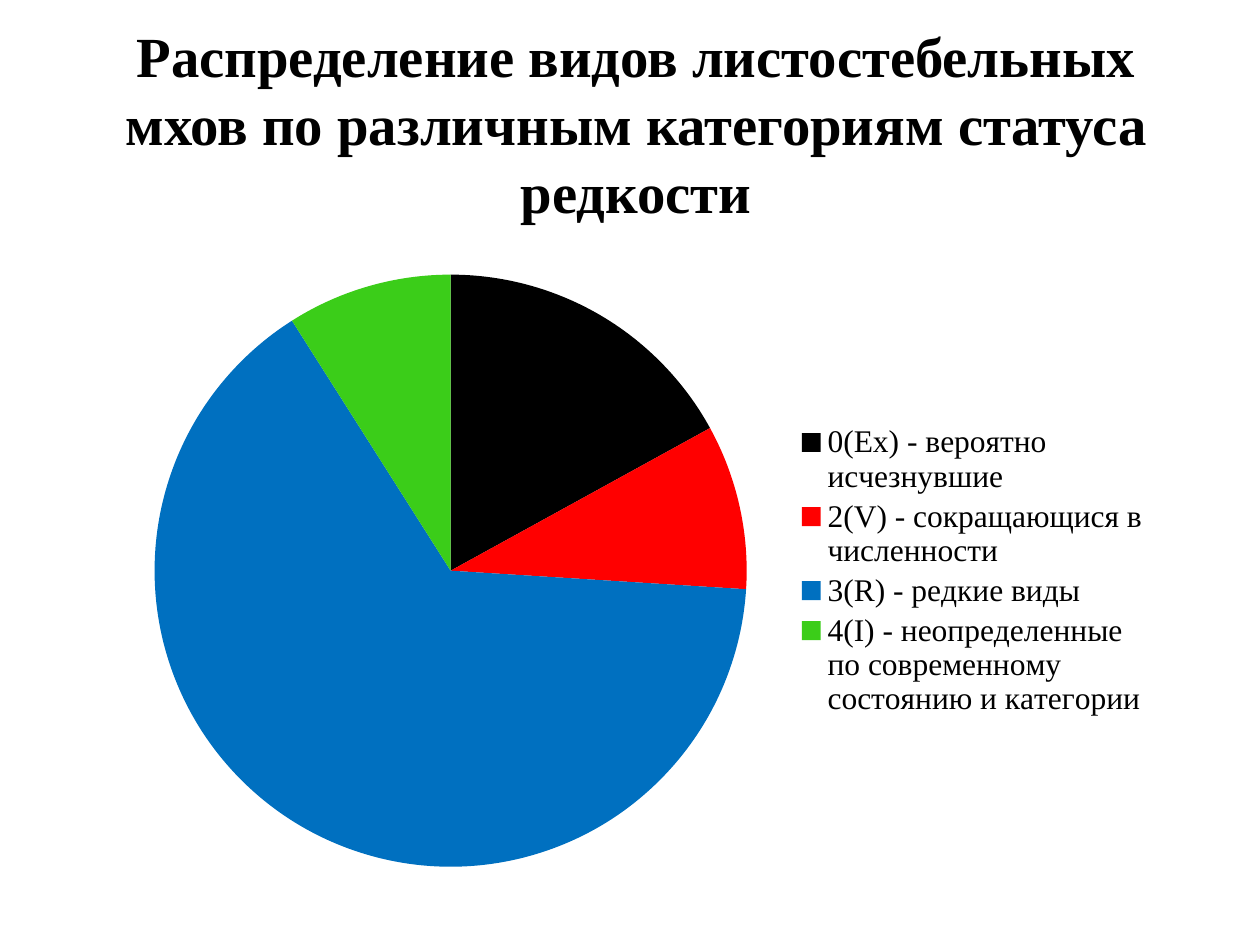
from lxml.etree import SubElement
from pptx import Presentation
from pptx.chart.data import CategoryChartData
from pptx.dml.color import RGBColor
from pptx.enum.chart import XL_CHART_TYPE, XL_LEGEND_POSITION
from pptx.enum.text import MSO_ANCHOR, MSO_AUTO_SIZE, PP_ALIGN
from pptx.oxml.ns import qn
from pptx.util import Pt

FONT = "Times New Roman"
TITLE = "Распределение видов листостебельных мхов по различным категориям статуса редкости"
CATEGORIES = [
    ("0(Ех) - вероятно исчезнувшие", 17, "000000"),
    ("2(V) - сокращающися в численности", 9, "FF0000"),
    ("3(R) - редкие виды", 65, "0070C0"),
    ("4(I) - неопределенные по современному состоянию и категории", 9, "3BCD19"),
]


def rgb(value):
    return RGBColor.from_string(value)


def set_all(obj, values):
    for name, value in values.items():
        setattr(obj, name, value)


def set_font(font, size, bold=False):
    set_all(font, {"name": FONT, "size": Pt(size), "bold": bold})
    font.color.rgb = rgb("000000")


def set_layout(parent, x, y, w, h, inner=False):
    layout = parent.get_or_add_layout() if hasattr(parent, "get_or_add_layout") else parent.find(qn("c:layout"))
    if layout is None:
        layout = SubElement(parent, qn("c:layout"))
        parent.remove(layout)
        parent.insert(1 if parent.tag == qn("c:legend") else 0, layout)
    for child in list(layout):
        layout.remove(child)
    manual = SubElement(layout, qn("c:manualLayout"))
    values = {"layoutTarget": "inner"} if inner else {}
    values.update(xMode="edge", yMode="edge", x=x, y=y, w=w, h=h)
    for name, value in values.items():
        SubElement(manual, qn(f"c:{name}")).set("val", str(value))


def add_title(s, x, y, w, h):
    tf = s.shapes.add_textbox(Pt(x), Pt(y), Pt(w), Pt(h)).text_frame
    set_all(tf, {
        "word_wrap": True,
        "auto_size": MSO_AUTO_SIZE.NONE,
        "vertical_anchor": MSO_ANCHOR.MIDDLE,
        "margin_bottom": Pt(42.5),
    })
    p = tf.paragraphs[0]
    set_all(p, {"alignment": PP_ALIGN.CENTER, "line_spacing": Pt(38.9)})
    r = p.add_run()
    r.text = TITLE
    set_font(r.font, 32.4, True)


def add_pie(s, x, y, w, h):
    names, values, colors = zip(*CATEGORIES)
    data = CategoryChartData()
    data.categories = names
    data.add_series("Series 1", values)
    chart = s.shapes.add_chart(XL_CHART_TYPE.PIE, Pt(x), Pt(y), Pt(w), Pt(h), data).chart
    set_all(chart, {"has_title": False, "has_legend": True})
    set_font(chart.font, 10)
    plot = chart.plots[0]
    plot.vary_by_categories = True
    for i, color in enumerate(colors):
        fill = plot.series[0].points[i].format.fill
        fill.solid()
        fill.fore_color.rgb = rgb(color)
    legend = chart.legend
    set_all(legend, {"position": XL_LEGEND_POSITION.RIGHT, "include_in_layout": False})
    set_font(legend.font, 18)
    area = chart.element.find(".//" + qn("c:plotArea"))
    set_layout(area, 0.04, 0.03, 0.57, 0.94, inner=True)
    set_layout(chart.element.find(".//" + qn("c:legend")), 0.65, 0.26, 0.34, 0.48)


def main():
    prs = Presentation()
    set_all(prs, {"slide_width": Pt(720), "slide_height": Pt(540)})
    s = prs.slides.add_slide(prs.slide_layouts[6])
    add_title(s, 39.6, 44.64, 648, 90)
    add_pie(s, 61.92, 146.16, 601.92, 360)
    prs.save("out.pptx")


if __name__ == "__main__":
    main()
